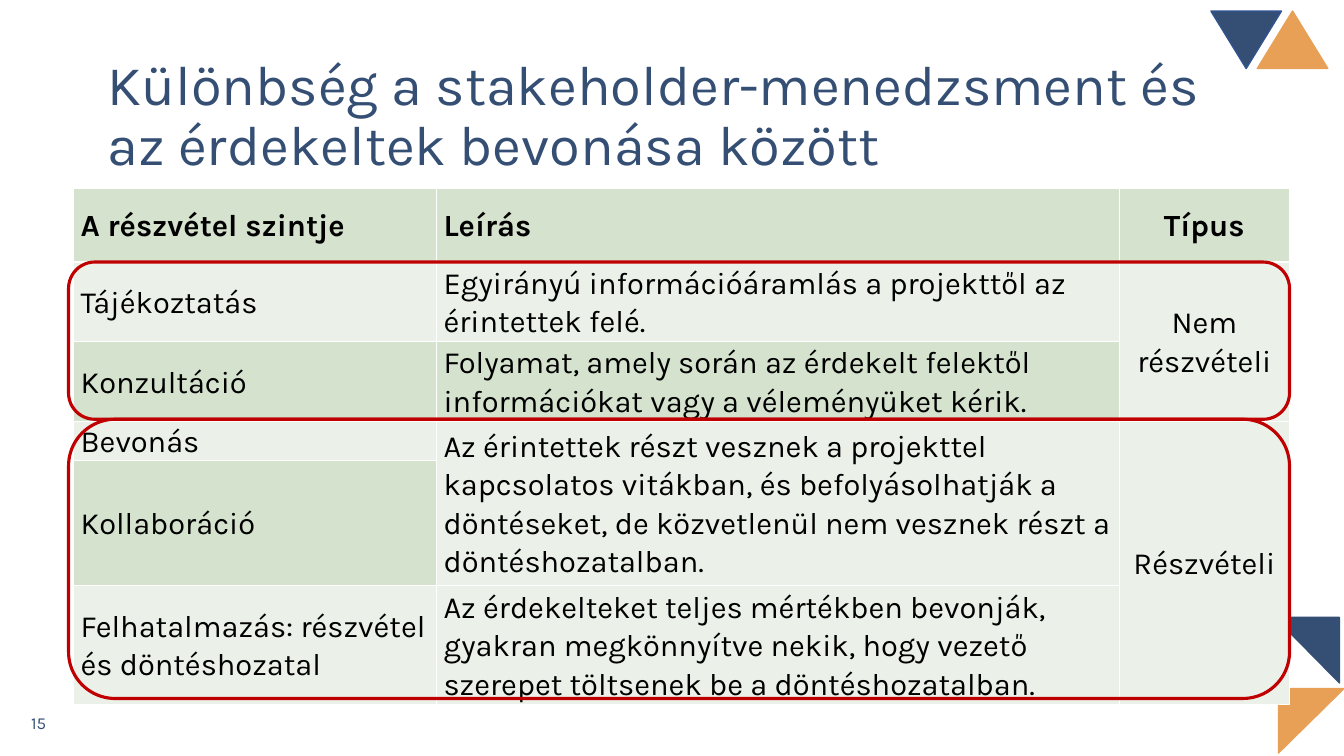
from lxml.etree import SubElement
from pptx import Presentation
from pptx.dml.color import RGBColor
from pptx.enum.shapes import MSO_SHAPE as Shape
from pptx.enum.text import MSO_ANCHOR as Anchor, PP_ALIGN as Align
from pptx.oxml.ns import qn
from pptx.util import Inches, Pt

FONT = "Karla"
NAVY, ORANGE, RED = "354F74", "E89F56", "C00000"
BLACK, WHITE = "000000", "FFFFFF"
DARK_GREEN, LIGHT_GREEN = "D4E2CE", "EBF1E8"

COLUMNS = [3.6, 6.77, 1.69]
ROWS = [0.73, 0.79, 0.79, 0.38, 1.24, 1.11]
LEVELS = [
    ("A részvétel szintje", "Leírás", "Típus"),
    ("Tájékoztatás",
     "Egyirányú információáramlás a projekttől az érintettek felé.",
     "Nem részvételi"),
    ("Konzultáció",
     "Folyamat, amely során az érdekelt felektől információkat vagy a "
     "véleményüket kérik.", None),
    ("Bevonás",
     "Az érintettek részt vesznek a projekttel kapcsolatos vitákban, és "
     "befolyásolhatják a döntéseket, de közvetlenül nem vesznek részt a "
     "döntéshozatalban.", "Részvételi"),
    ("Kollaboráció", None, None),
    ("Felhatalmazás: részvétel és döntéshozatal",
     "Az érdekelteket teljes mértékben bevonják, gyakran megkönnyítve nekik, "
     "hogy vezető szerepet töltsenek be a döntéshozatalban.", None),
]
MERGES = [((1, 2), (2, 2)), ((3, 1), (4, 1)), ((3, 2), (5, 2))]


def color(hex_text):
    return RGBColor.from_string(hex_text)


def inches(box):
    return [Inches(length) for length in box]


def write(frame, text, size, ink, bold=False, align=Align.LEFT, spacing=None):
    para = frame.paragraphs[0]
    para.alignment = align
    para.line_spacing = spacing
    span = para.add_run()
    span.text = text
    span.font.name, span.font.size, span.font.bold = FONT, Pt(size), bold
    span.font.color.rgb = color(ink)


def add_text(page, box, text, size, spacing=None):
    frame = page.shapes.add_textbox(*inches(box)).text_frame
    frame.word_wrap = True
    frame.vertical_anchor = Anchor.MIDDLE
    write(frame, text, size, NAVY, spacing=spacing)


def add_outline(page, kind, box, adjustment, line, width, fill=None):
    shape = page.shapes.add_shape(kind, *inches(box))
    shape.shadow.inherit = False
    shape.adjustments[0] = adjustment
    shape.line.color.rgb = color(line)
    shape.line.width = Pt(width)
    if fill:
        shape.fill.solid()
        shape.fill.fore_color.rgb = color(fill)
    else:
        shape.fill.background()
    return shape


def add_corner_triangles(page):
    for box, tip, turn, fill, line in [
        ((12.47, 0.11, 0.7, 0.57), 0.5, 0, ORANGE, ORANGE),
        ((12.68, 6.83, 0.65, 0.64), 1, 180, ORANGE, ORANGE),
        ((12.64, 6.13, 0.65, 0.64), 1, 270, NAVY, NAVY),
        ((12.01, 0.11, 0.7, 0.57), 0.5, 180, NAVY, "31538F"),
    ]:
        triangle = add_outline(page, Shape.ISOSCELES_TRIANGLE, box, tip, line, 1, fill)
        triangle.rotation = turn


def add_borders(cell, ink, width):
    properties = cell._tc.get_or_add_tcPr()
    for side in ("a:lnL", "a:lnR", "a:lnT", "a:lnB"):
        line = SubElement(properties, qn(side), w=str(Pt(width)))
        SubElement(SubElement(line, qn("a:solidFill")), qn("a:srgbClr"), val=ink)


def style_cell(cell, fill):
    add_borders(cell, WHITE, 1)
    cell.fill.solid()
    cell.fill.fore_color.rgb = color(fill)
    cell.vertical_anchor = Anchor.MIDDLE
    cell.margin_left = cell.margin_right = Inches(0.07)
    cell.margin_top = cell.margin_bottom = 0


def add_levels_table(page, left, top):
    box = inches((left, top, sum(COLUMNS), sum(ROWS)))
    table = page.shapes.add_table(len(ROWS), len(COLUMNS), *box).table
    table.first_row = table.horz_banding = False
    for column, width in zip(table.columns, COLUMNS):
        column.width = Inches(width)
    for row, height in zip(table.rows, ROWS):
        row.height = Inches(height)
    for start, end in MERGES:
        table.cell(*start).merge(table.cell(*end))
    for r, level in enumerate(LEVELS):
        for c, text in enumerate(level):
            cell = table.cell(r, c)
            banded = r % 2 == 0 and text is not None
            style_cell(cell, DARK_GREEN if banded else LIGHT_GREEN)
            if text:
                align = Align.CENTER if c == 2 else Align.LEFT
                write(cell.text_frame, text, 22, BLACK, r == 0, align, 1.07)


def add_group_frames(page, left, top, width, heights):
    for height in heights:
        add_outline(page, Shape.ROUNDED_RECTANGLE, (left, top, width, height),
                    0.167, RED, 2.25)
        top += height


def main():
    deck = Presentation()
    deck.slide_width, deck.slide_height = Inches(13.33), Inches(7.5)
    page = deck.slides.add_slide(deck.slide_layouts[6])
    add_text(page, (0.21, 6.97, 3, 0.4), "15", 12)
    add_corner_triangles(page)
    add_text(page, (0.97, 0.44, 11.5, 1.45),
             "Különbség a stakeholder-menedzsment és az érdekeltek bevonása között",
             40, 0.9)
    add_levels_table(page, 0.73, 1.87)
    add_group_frames(page, 0.68, 2.6, 12.11, [1.56, 2.77])
    deck.save("out.pptx")


if __name__ == "__main__":
    main()
